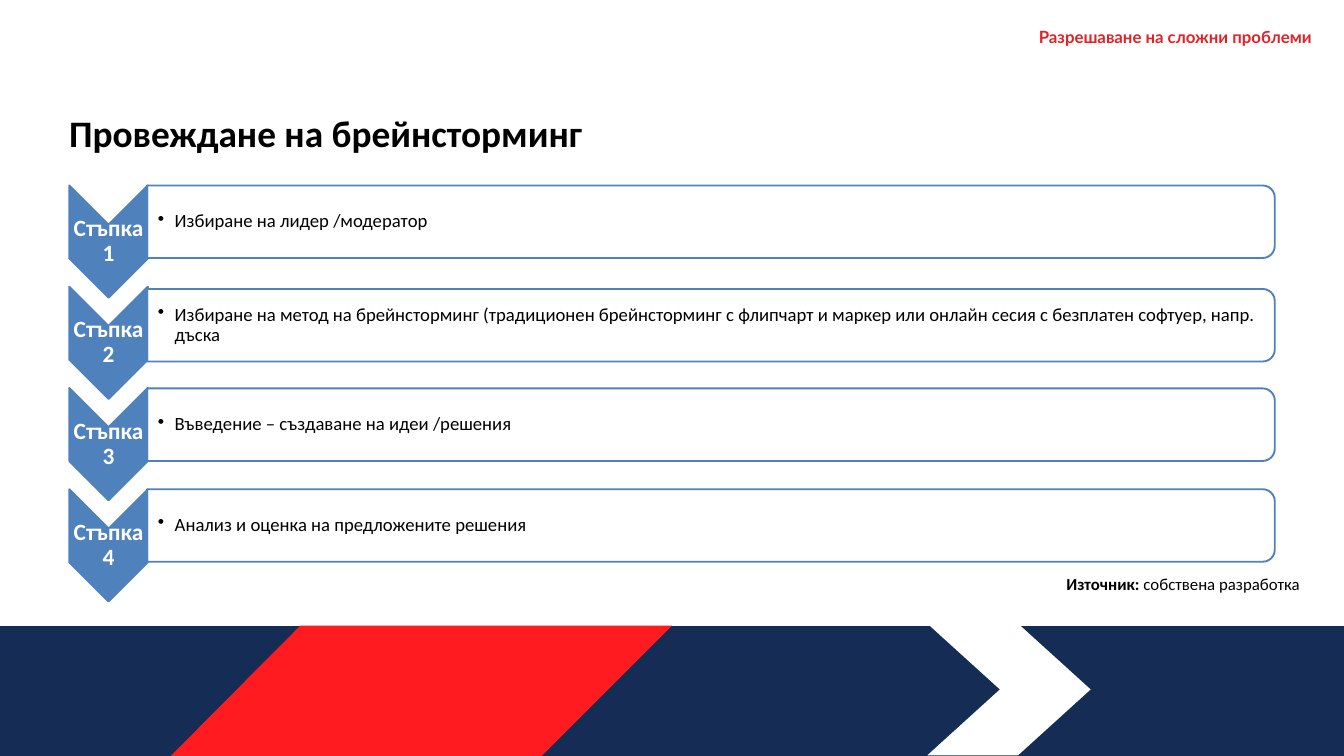
from dataclasses import dataclass

from lxml.etree import SubElement
from pptx import Presentation
from pptx.dml.color import RGBColor
from pptx.enum.shapes import MSO_SHAPE
from pptx.enum.text import MSO_ANCHOR, PP_ALIGN
from pptx.oxml.ns import qn
from pptx.util import Inches, Pt

HEADER = "Разрешаване на сложни проблеми"
TITLE = "Провеждане на брейнсторминг"
STEP_WORD = "Стъпка"
# Description of each step and the top of its box
STEPS = [
    ("Избиране на лидер /модератор", 2.76),
    ("Избиране на метод на брейнсторминг (традиционен брейнсторминг с флипчарт "
     "и маркер или онлайн сесия с безплатен софтуер, напр. дъска", 4.3),
    ("Въведение – създаване на идеи /решения", 5.78),
    ("Анализ и оценка на предложените решения", 7.28),
]
SOURCE = [("Източник: ", True), ("собствена разработка", False)]


@dataclass(frozen=True)
class Theme:
    navy: str = "152D54"
    red: str = "FF1B20"
    white: str = "FFFFFF"
    black: str = "000000"
    blue: str = "4F81BD"
    header_red: str = "E12227"
    body_font: str = "Calibri"
    header_font: str = "Lato"
    title_size: int = 40
    step_size: int = 25
    text_size: int = 20
    small_size: int = 18


THEME = Theme()
WIDTH, HEIGHT = 20, 11.25
BAND_TOP = 9.31
BAND_SHAPES = [
    (THEME.navy, [(0, BAND_TOP), (WIDTH, BAND_TOP), (WIDTH, HEIGHT), (0, HEIGHT)]),
    (THEME.white, [(13.8, 9.28), (15.15, 9.28), (16.23, 10.26),
                   (15.15, 11.24), (13.8, 11.24), (14.88, 10.26)]),
    (THEME.red, [(4.47, BAND_TOP), (10, BAND_TOP), (8.06, HEIGHT), (2.54, HEIGHT)]),
]
ARROW_LEFT, ARROW_TOP, ARROW_WIDTH, ARROW_HEIGHT = 1.03, 2.76, 1.17, 1.67
ARROW_PITCH = 1.507
BOX_LEFT, BOX_WIDTH, BOX_HEIGHT = 2.19, 16.78, 1.08


def paint(shape, fill, line=None):
    shape.shadow.inherit = False
    shape.fill.solid()
    shape.fill.fore_color.rgb = RGBColor.from_string(fill)
    if line:
        shape.line.color.rgb = RGBColor.from_string(line)
        shape.line.width = Pt(2)
    else:
        shape.line.fill.background()


def add_polygon(slide, points, fill):
    start, *rest = [(Inches(x), Inches(y)) for x, y in points]
    builder = slide.shapes.build_freeform(*start)
    builder.add_line_segments(rest, close=True)
    paint(builder.convert_to_shape(), fill)


def add_turned(slide, kind, left, top, width, height, fill):
    """Add a shape turned by 90 degrees that covers the given area once turned."""
    shape = slide.shapes.add_shape(
        kind, Inches(left + (width - height) / 2), Inches(top + (height - width) / 2),
        Inches(height), Inches(width))
    shape.rotation = 90
    paint(shape, fill, THEME.blue)
    return shape


def add_text(slide, area, runs, size, color, font=THEME.body_font, bold=False,
             align=PP_ALIGN.LEFT, anchor=MSO_ANCHOR.TOP, insets=(0, 0.02, 0, 0),
             spacing=None, wrap=True):
    """Add one paragraph made of (text, bold) runs, or of a single string."""
    frame = slide.shapes.add_textbox(*map(Inches, area)).text_frame
    frame.word_wrap = wrap
    frame.vertical_anchor = anchor
    (frame.margin_left, frame.margin_top,
     frame.margin_right, frame.margin_bottom) = map(Inches, insets)
    paragraph = frame.paragraphs[0]
    paragraph.alignment = align
    paragraph.line_spacing = spacing
    paragraph.font.name = font
    paragraph.font.size = Pt(size)
    paragraph.font.color.rgb = RGBColor.from_string(color)
    if isinstance(runs, str):
        paragraph.font.bold = bold
        paragraph.add_run().text = runs
    else:
        for text, run_bold in runs:
            run = paragraph.add_run()
            run.text = text
            run.font.bold = run_bold
    return paragraph


def add_bullet(paragraph):
    properties = paragraph._p.get_or_add_pPr()
    properties.set("marL", str(Inches(0.25)))
    properties.set("indent", str(-Inches(0.25)))
    bullet = properties.makeelement(qn("a:buChar"), {"char": "•"})
    properties.insert_element_before(bullet, "a:tabLst", "a:defRPr", "a:extLst")


def add_step(slide, index, description, box_top):
    arrow_top = ARROW_TOP + index * ARROW_PITCH
    add_turned(slide, MSO_SHAPE.CHEVRON, ARROW_LEFT, arrow_top,
               ARROW_WIDTH, ARROW_HEIGHT, THEME.blue)
    add_text(slide, (ARROW_LEFT, arrow_top + ARROW_WIDTH / 2, ARROW_WIDTH, 0.5),
             f"{STEP_WORD} {index + 1}", THEME.step_size, THEME.white, bold=True,
             align=PP_ALIGN.CENTER, anchor=MSO_ANCHOR.MIDDLE,
             insets=(0.02,) * 4, spacing=0.9)

    box = add_turned(slide, MSO_SHAPE.ROUND_2_SAME_RECTANGLE, BOX_LEFT, box_top,
                     BOX_WIDTH, BOX_HEIGHT, THEME.white)
    fill_color = box._element.spPr.find(qn("a:solidFill"))[0]
    SubElement(fill_color, qn("a:alpha"), val="90000")
    add_bullet(add_text(
        slide, (BOX_LEFT, box_top + 0.05, BOX_WIDTH - 0.05, BOX_HEIGHT - 0.1),
        description, THEME.text_size, THEME.black, anchor=MSO_ANCHOR.MIDDLE,
        insets=(0.16, 0.01, 0.01, 0.01), spacing=0.9))


def main():
    deck = Presentation()
    deck.slide_width, deck.slide_height = Inches(WIDTH), Inches(HEIGHT)
    slide = deck.slides.add_slide(deck.slide_layouts[6])

    for fill, points in BAND_SHAPES:
        add_polygon(slide, points, fill)
    for index, (description, box_top) in enumerate(STEPS):
        add_step(slide, index, description, box_top)

    title = add_text(slide, (1.03, 1.62, 18.39, 0.69), TITLE,
                     THEME.title_size, THEME.black, bold=True)
    title.space_before = Pt(1.1)
    add_text(slide, (9, 0.37, 10.52, 0.32), HEADER, THEME.small_size,
             THEME.header_red, THEME.header_font, bold=True, align=PP_ALIGN.RIGHT)
    add_text(slide, (15.75, 8.49, 3.71, 0.4), SOURCE, THEME.small_size, THEME.black,
             align=PP_ALIGN.CENTER, insets=(0.1, 0.05, 0.1, 0.05), wrap=False)

    deck.save("out.pptx")


if __name__ == "__main__":
    main()
